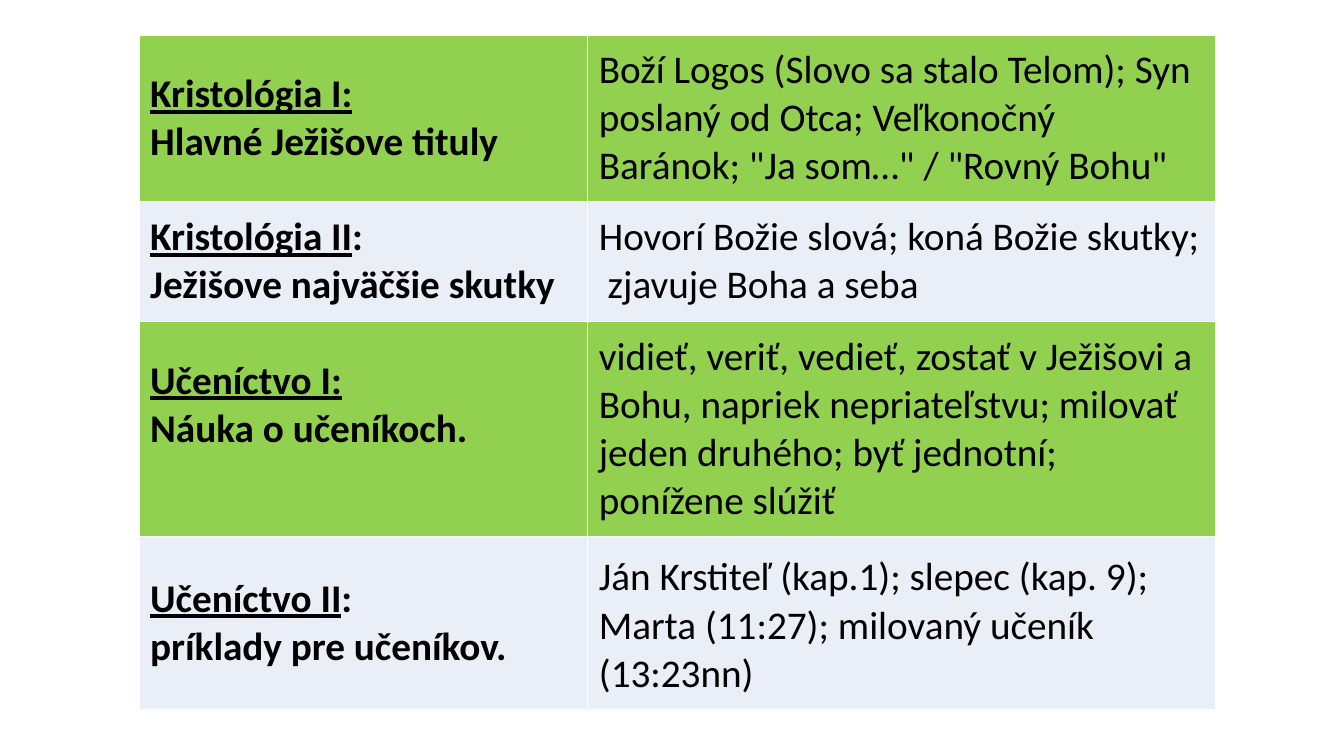
from lxml.etree import SubElement
from pptx import Presentation
from pptx.dml.color import RGBColor as Color
from pptx.enum.text import MSO_ANCHOR as Anchor
from pptx.oxml.ns import qn
from pptx.util import Inches, Pt

GREEN = RGB_GREEN = Color(0x92, 0xD0, 0x50)
PALE = Color(0xEA, 0xEF, 0xF7)
BLACK = Color(0, 0, 0)
WHITE = Color(0xFF, 0xFF, 0xFF)

LEFT, TOP = 1.38, 0.35
COLS = [4.45, 6.23]
ROWS = [1.65, 1.19, 2.13, 1.72]
PAD = 0.11
LINE = 0.48
SIZE, WIDE = 28, 32

TOPICS = [
    ("Kristológia I:", "", "Hlavné Ježišove tituly",
     ['Boží Logos (Slovo sa stalo Telom); Syn poslaný od Otca; '
      'Veľkonočný Baránok; "Ja som…" / "Rovný Bohu"']),
    ("Kristológia II", ":", "Ježišove najväčšie skutky",
     ["Hovorí Božie slová; koná Božie skutky;  zjavuje Boha a seba"]),
    ("Učeníctvo I:", "", "Náuka o učeníkoch.",
     ["vidieť, veriť, vedieť, zostať v Ježišovi a Bohu, napriek "
      "nepriateľstvu; milovať jeden druhého; byť jednotní; ponížene slúžiť"]),
    ("Učeníctvo II", ":", "príklady pre učeníkov.",
     ["Ján Krstiteľ (kap.1); slepec (kap. 9);", " ",
      "Marta (11:27); milovaný učeník (13:23nn)"]),
]


def add_run(para, text, bold=False, under=False):
    run = para.add_run()
    run.text = text
    font = run.font
    font.name = "Calibri"
    font.size = Pt(WIDE if text == " " else SIZE)
    font.bold = bold
    font.underline = under
    font.color.rgb = BLACK


def add_edges(cell):
    props = cell._tc.get_or_add_tcPr()
    for spot, side in enumerate(("lnL", "lnR", "lnT", "lnB")):
        edge = props.makeelement(qn(f"a:{side}"), {"w": str(Pt(1))})
        fill = SubElement(edge, qn("a:solidFill"))
        SubElement(fill, qn("a:srgbClr"), val=str(WHITE))
        props.insert(spot, edge)


def style_cell(cell, color):
    cell.fill.solid()
    cell.fill.fore_color.rgb = color
    cell.vertical_anchor = Anchor.MIDDLE
    cell.margin_left = cell.margin_right = Inches(PAD)
    cell.margin_top = cell.margin_bottom = Inches(PAD)
    add_edges(cell)


def fill_topic(cell, head, mark, body):
    para = cell.text_frame.paragraphs[0]
    add_run(para, head, bold=True, under=True)
    if mark:
        add_run(para, mark, bold=True)
    para.add_line_break()
    add_run(para, body, bold=True)


def fill_notes(cell, parts):
    para = cell.text_frame.paragraphs[0]
    for part in parts:
        add_run(para, part)


def add_grid(slide):
    frame = slide.shapes.add_table(
        len(ROWS), len(COLS), Inches(LEFT), Inches(TOP),
        Inches(sum(COLS)), Inches(sum(ROWS)))
    grid = frame.table
    grid.first_row = grid.horz_banding = False
    for col, width in zip(grid.columns, COLS):
        col.width = Inches(width)
    for row, height in zip(grid.rows, ROWS):
        row.height = Inches(height)
    return grid


def main():
    deck = Presentation()
    deck.slide_width, deck.slide_height = Inches(13.33), Inches(7.5)
    slide = deck.slides.add_slide(deck.slide_layouts[6])
    grid = add_grid(slide)
    for row, (head, mark, body, parts) in enumerate(TOPICS):
        for col in range(len(COLS)):
            style_cell(grid.cell(row, col), PALE if row % 2 else GREEN)
        fill_topic(grid.cell(row, 0), head, mark, body)
        fill_notes(grid.cell(row, 1), parts)
    grid.cell(2, 0).margin_bottom = Inches(PAD + LINE)
    deck.save("out.pptx")


if __name__ == "__main__":
    main()
